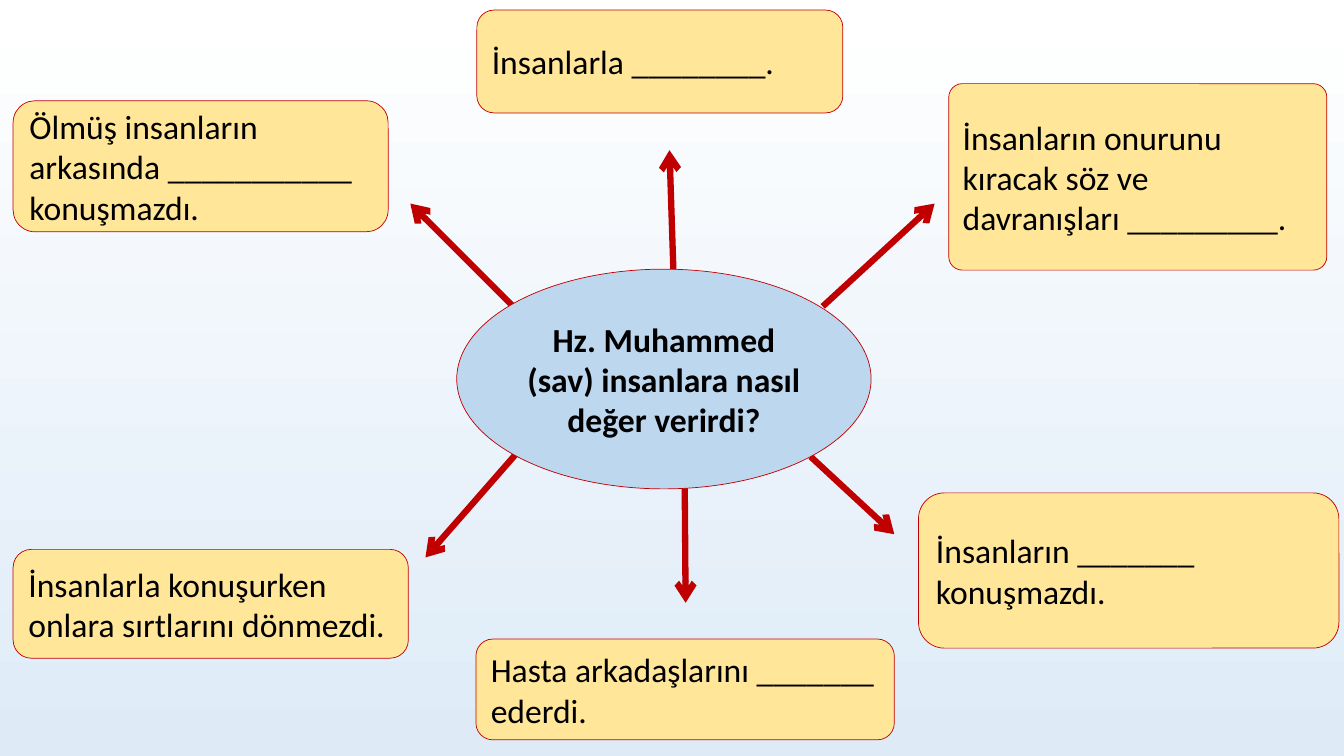
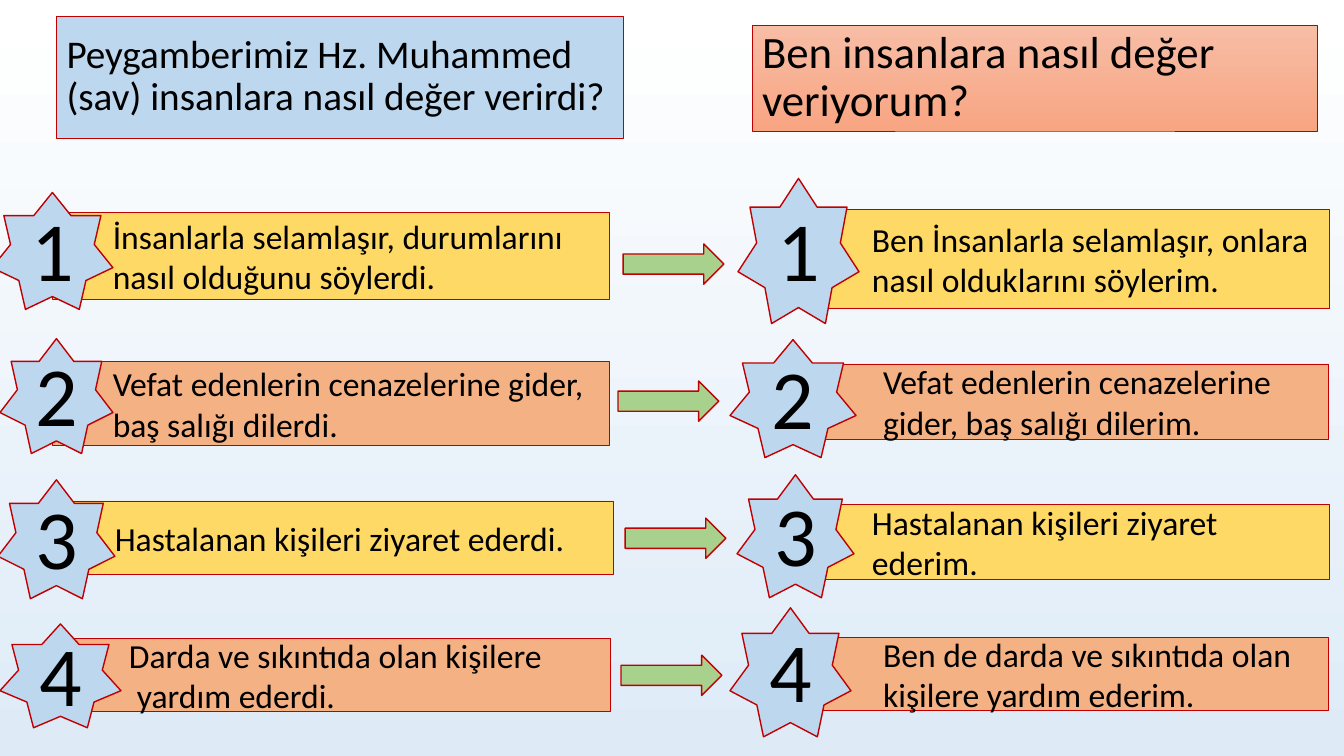
from pptx import Presentation
from pptx.enum.shapes import MSO_CONNECTOR, MSO_SHAPE
from pptx.enum.text import MSO_ANCHOR, MSO_AUTO_SIZE, PP_ALIGN
from pptx.dml.color import RGBColor
from pptx.oxml.ns import qn
from pptx.util import Pt
from lxml import etree

PX = 9144
FONT = "Calibri"
RED = "C00000"
BLACK = "000000"
BLUE = "BDD7EE"
CREAM = "FFE699"
YELLOW = "FFD966"
ORANGE = "F4B183"
GREEN = "A9D18E"


def paint(fill, *colours):
    if len(colours) == 1:
        fill.solid()
        fill.fore_color.rgb = RGBColor.from_string(colours[0])
    else:
        fill.gradient()
        fill.gradient_angle = 270
        for stop, colour in zip(fill.gradient_stops, colours):
            stop.color.rgb = RGBColor.from_string(colour)


def format_shape(shape, box, colours, lines=(), size=24, line_width=0.5,
                 alignment=PP_ALIGN.LEFT, bold=False, spacing=1.0):
    shape.left, shape.top, shape.width, shape.height = [value * PX for value in box]
    shape.shadow.inherit = False
    paint(shape.fill, *colours)
    paint(shape.line.fill, RED)
    shape.line.width = Pt(line_width)
    frame = shape.text_frame
    frame.word_wrap = True
    frame.auto_size = MSO_AUTO_SIZE.NONE
    frame.vertical_anchor = MSO_ANCHOR.MIDDLE
    for index, (text, indent) in enumerate(lines):
        paragraph = frame.add_paragraph() if index else frame.paragraphs[0]
        paragraph.alignment = alignment
        paragraph.line_spacing = spacing
        paragraph._p.get_or_add_pPr().set("marL", str(indent * PX))
        run = paragraph.add_run()
        run.text = text
        run.font.name = FONT
        run.font.size = Pt(size)
        run.font.bold = bold
        paint(run.font.fill, BLACK)


presentation = Presentation()
presentation.slide_width = 1333 * PX
presentation.slide_height = 750 * PX
paint(presentation.slide_master.background.fill, "FFFFFF", "DEEBF7")

slide = presentation.slides.add_slide(presentation.slide_layouts[6])
answers = [
    ((13, 100, 372, 130), 0.167, "Ölmüş insanların arkasında ___________ konuşmazdı."),
    ((473, 10, 363, 102), 0.167, "İnsanlarla ________."),
    ((941, 83, 375, 185), 0.073, "İnsanların onurunu kıracak söz ve davranışları _________."),
    ((13, 545, 392, 108), 0.167, "İnsanlarla konuşurken onlara sırtlarını dönmezdi."),
    ((472, 634, 415, 100), 0.167, "Hasta arkadaşlarını _______ ederdi."),
    ((911, 489, 417, 154), 0.167, "İnsanların _______ konuşmazdı."),
]
for box, corner, text in answers:
    shape = slide.shapes.add_shape(MSO_SHAPE.ROUNDED_RECTANGLE, 0, 0, 0, 0)
    shape.adjustments[0] = corner
    format_shape(shape, box, [CREAM], [(text, 0)])

spokes = [
    (668, 272, 664, 149),
    (816, 304, 927, 202),
    (679, 464, 680, 598),
    (509, 304, 407, 202),
    (804, 453, 887, 530),
    (520, 441, 422, 553),
]
for ends in spokes:
    connector = slide.shapes.add_connector(
        MSO_CONNECTOR.STRAIGHT, *[value * PX for value in ends])
    paint(connector.line.fill, RED)
    connector.line.width = Pt(4.5)
    properties = connector._element.spPr
    etree.SubElement(properties.find(qn("a:ln")), qn("a:tailEnd"), type="arrow")
    etree.SubElement(properties, qn("a:effectLst"))

centre = slide.shapes.add_shape(MSO_SHAPE.OVAL, 0, 0, 0, 0)
format_shape(centre, (453, 267, 411, 218), [BLUE],
             [("Hz. Muhammed (sav) insanlara nasıl değer verirdi?", 0)],
             alignment=PP_ALIGN.CENTER, bold=True)

slide = presentation.slides.add_slide(presentation.slide_layouts[5])
format_shape(slide.shapes.title, (56, 16, 562, 121), [BLUE],
             [("Peygamberimiz Hz. Muhammed (sav) insanlara nasıl değer verirdi?", 0)],
             size=28, spacing=0.9)
question = slide.shapes.add_shape(MSO_SHAPE.RECTANGLE, 0, 0, 0, 0)
format_shape(question, (746, 25, 561, 105), ["F7BDA5", "F8A582"],
             [("Ben insanlara nasıl değer veriyorum?", 0)], size=32, spacing=0.9)

columns = [
    [
        ((52, 211, 552, 86), (-8, 191, 120, 116),
         [("İnsanlarla selamlaşır, durumlarını nasıl olduğunu söylerdi.", 50)]),
        ((52, 359, 552, 83), (0, 336, 112, 114),
         [("Vefat edenlerin cenazelerine gider, baş salığı dilerdi.", 50)]),
        ((56, 497, 552, 73), (-2, 476, 116, 118),
         [("Hastalanan kişileri ziyaret ederdi.", 48)]),
        ((53, 633, 552, 73), (0, 619, 120, 103),
         [("Darda ve sıkıntıda olan kişilere", 65), ("yardım ederdi.", 73)]),
    ],
    [
        ((805, 208, 514, 98), (732, 177, 120, 144),
         [("Ben İnsanlarla selamlaşır, onlara nasıl olduklarını söylerim.", 50)]),
        ((766, 361, 552, 75), (724, 337, 125, 117),
         [("Vefat edenlerin cenazelerine gider, baş salığı dilerim.", 100)]),
        ((805, 500, 514, 75), (731, 471, 116, 122),
         [("Hastalanan kişileri ziyaret ederim.", 50)]),
        ((766, 632, 552, 73), (724, 603, 120, 128),
         [("Ben de darda ve sıkıntıda olan kişilere yardım ederim.", 100)]),
    ],
]
for column in columns:
    for number, (bar_box, star_box, lines) in enumerate(column, 1):
        bar = slide.shapes.add_shape(MSO_SHAPE.RECTANGLE, 0, 0, 0, 0)
        format_shape(bar, bar_box, [YELLOW if number % 2 else ORANGE], lines)
        star = slide.shapes.add_shape(MSO_SHAPE.STAR_7_POINT, 0, 0, 0, 0)
        format_shape(star, star_box, [BLUE], [(str(number), 0)], size=60,
                     line_width=1, alignment=PP_ALIGN.CENTER)

for left, top in [(618, 242), (613, 378), (620, 514), (616, 650)]:
    arrow = slide.shapes.add_shape(MSO_SHAPE.RIGHT_ARROW, 0, 0, 0, 0)
    format_shape(arrow, (left, top, 100, 40), [GREEN], line_width=1)

presentation.save("out.pptx")
